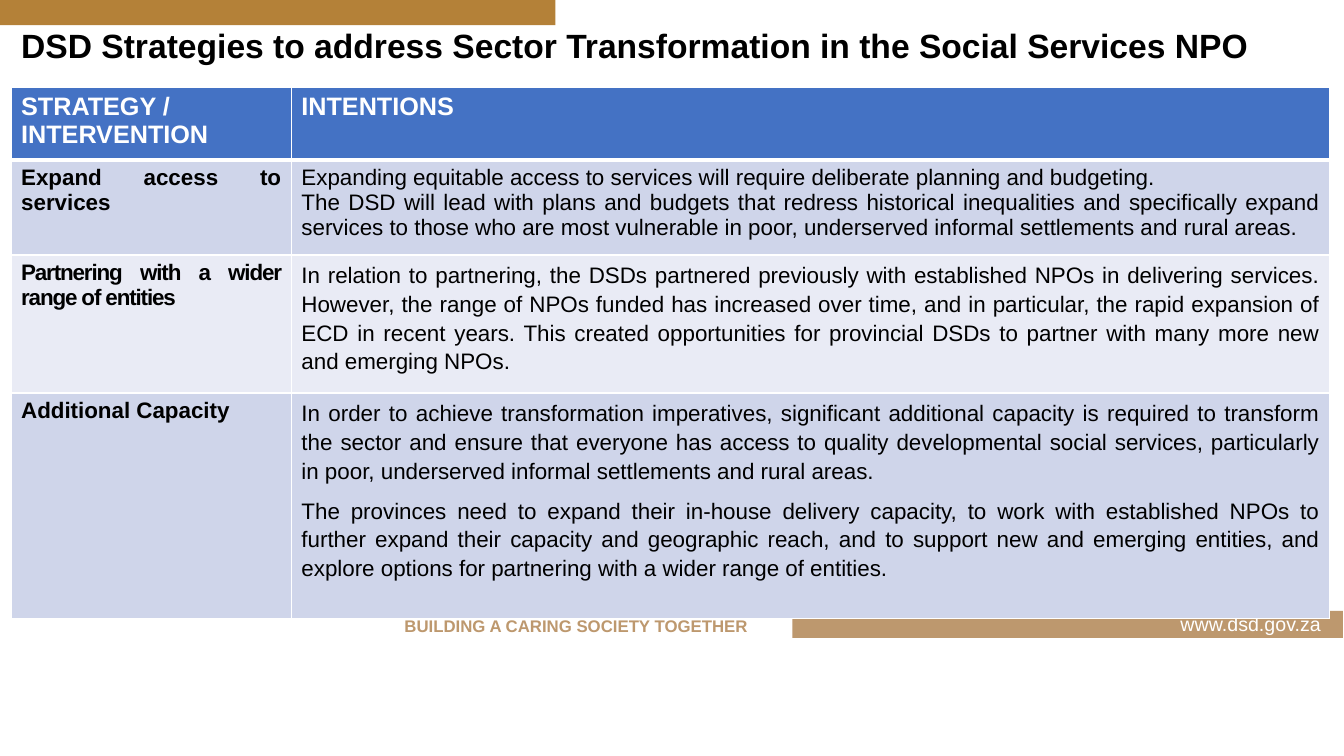
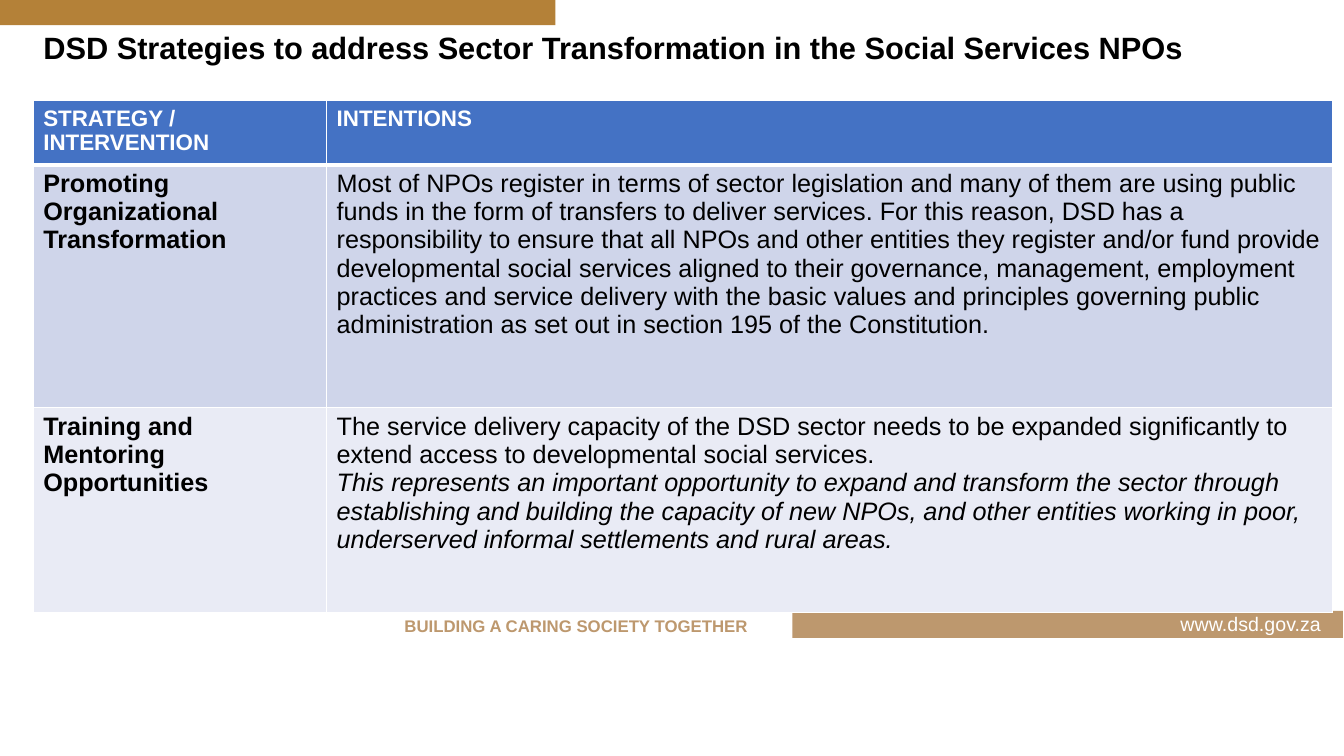
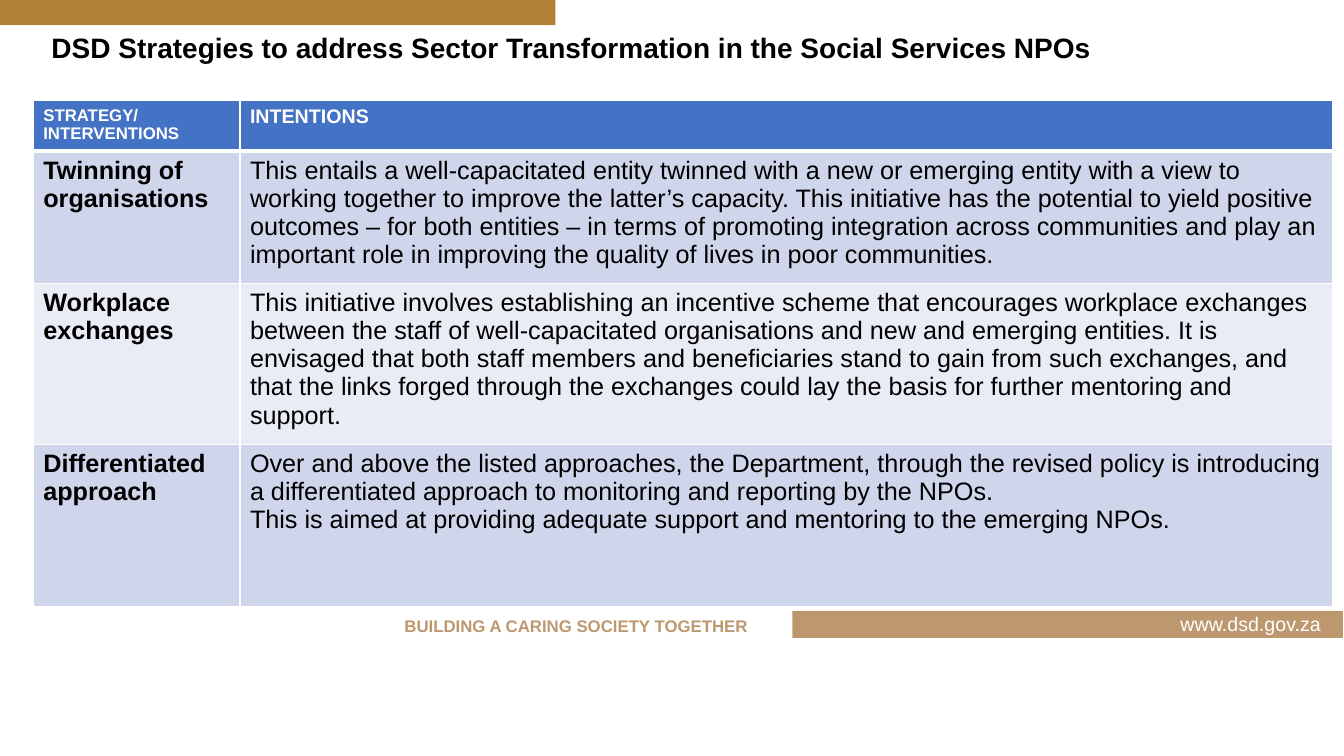
from lxml.etree import SubElement
from pptx import Presentation
from pptx.dml.color import RGBColor
from pptx.enum.shapes import MSO_SHAPE as Shape
from pptx.enum.text import MSO_ANCHOR as Anchor, MSO_AUTO_SIZE as AutoSize, PP_ALIGN as Align
from pptx.oxml.ns import qn
from pptx.util import Inches, Pt

BLACK = RGBColor(0x00, 0x00, 0x00)
WHITE = RGBColor(0xFF, 0xFF, 0xFF)
GOLD = RGBColor(0xB4, 0x81, 0x38)
TAN = RGBColor(0xBD, 0x98, 0x6E)
HEADER_BLUE = RGBColor(0x44, 0x72, 0xC4)
BANDS = (RGBColor(0xCF, 0xD5, 0xEA), RGBColor(0xE9, 0xEB, 0xF5))
FONT = "Arial"
TITLE_ONLY = 5


def write(frame, *texts, size, color=BLACK, bold=False, italic=False,
          align=Align.LEFT, line=None, after=None, tracking=None):
    """Fill a frame with one paragraph per text; italic is one flag or the index set of italic paragraphs."""
    for index, text in enumerate(texts):
        paragraph = frame.add_paragraph() if index else frame.paragraphs[0]
        paragraph.alignment = align
        if line is not None:
            paragraph.line_spacing = line
        if after is not None:
            paragraph.space_after = Pt(after)
        run = paragraph.add_run()
        run.text = text
        font = run.font
        font.name, font.size, font.bold = FONT, Pt(size), bold
        font.italic = index in italic if isinstance(italic, set) else italic
        font.color.rgb = color
        if tracking is not None:
            run._r.get_or_add_rPr().set("spc", str(round(tracking * 100)))


def set_borders(cell, **widths):
    properties = cell._tc.get_or_add_tcPr()
    for side, width in widths.items():
        border = SubElement(properties, qn(f"a:ln{side}"), w=str(Pt(width)))
        fill = SubElement(border, qn("a:solidFill"))
        SubElement(fill, qn("a:srgbClr"), val=str(WHITE))


class Deck:
    def __init__(self):
        self.presentation = Presentation()
        self.presentation.slide_width = Inches(13.33)
        self.presentation.slide_height = Inches(7.5)
        self.slide = None

    def add_slide(self, title, at, size):
        layout = self.presentation.slide_layouts[TITLE_ONLY]
        self.slide = self.presentation.slides.add_slide(layout)
        self.band(0, -0.02, 5.51, GOLD)
        self.band(7.86, 6.06, 5.46, TAN)
        self.label("BUILDING A CARING SOCIETY TOGETHER", (3.57, 6.06, 4.29, 0.3),
                   size=12, color=TAN, bold=True, align=Align.CENTER)
        self.label("www.dsd.gov.za", (11.61, 6.02, 1.6, 0.34), wrap=False,
                   size=14, color=WHITE)
        heading = self.slide.shapes.title
        heading.left, heading.top, heading.width, heading.height = map(Inches, at)
        heading.text_frame.auto_size = AutoSize.NONE
        heading.text_frame.vertical_anchor = Anchor.MIDDLE
        write(heading.text_frame, title, size=size, bold=True, line=0.9)

    def band(self, left, top, width, color):
        band = self.slide.shapes.add_shape(
            Shape.RECTANGLE, Inches(left), Inches(top), Inches(width), Inches(0.27))
        band.shadow.inherit = False
        band.fill.solid()
        band.fill.fore_color.rgb = color
        band.line.fill.background()

    def label(self, text, at, wrap=True, **style):
        frame = self.slide.shapes.add_textbox(*map(Inches, at)).text_frame
        frame.word_wrap = wrap
        write(frame, text, **style)

    def strategy_table(self, left, top, widths, heights, headers, size, rows,
                       align=Align.LEFT):
        """Headers are (text, size) pairs; rows are (strategy, its style, intentions, their style)."""
        table = self.slide.shapes.add_table(
            len(heights), len(widths), Inches(left), Inches(top),
            Inches(sum(widths)), Inches(sum(heights))).table
        for column, width in zip(table.columns, widths):
            column.width = Inches(width)
        for row, height in zip(table.rows, heights):
            row.height = Inches(height)
        for column, (text, header_size) in enumerate(headers):
            cell = self.filled_cell(table, 0, column, HEADER_BLUE)
            write(cell.text_frame, text, size=header_size, color=WHITE, bold=True)
        for index, (strategy, strategy_style, intentions, intention_style) in enumerate(rows):
            color = BANDS[index % 2]
            cell = self.filled_cell(table, index + 1, 0, color)
            write(cell.text_frame, strategy, size=size, bold=True, align=align, **strategy_style)
            cell = self.filled_cell(table, index + 1, 1, color)
            write(cell.text_frame, *intentions, size=size, align=align, **intention_style)

    @staticmethod
    def filled_cell(table, row, column, color):
        cell = table.cell(row, column)
        set_borders(cell, L=1, R=1, T=3 if row == 1 else 1, B=3 if row == 0 else 1)
        cell.fill.solid()
        cell.fill.fore_color.rgb = color
        return cell


def main():
    deck = Deck()
    title = "DSD Strategies to address Sector Transformation in the Social Services NPO"
    airy = {"line": 1.15, "after": 8}

    deck.add_slide(title, (0.11, 0.28, 13.08, 0.38), 24)
    deck.strategy_table(
        0.11, 0.87, (2.78, 10.3), (0.72, 0.94, 1.37, 2.24),
        (("STRATEGY / INTERVENTION", 18), ("INTENTIONS", 18)), 16,
        [
            ("Expand access to services", {}, [
                "Expanding equitable access to services will require deliberate planning and "
                "budgeting.",
                "The DSD will lead with plans and budgets that redress historical inequalities "
                "and specifically expand services to those who are most vulnerable in poor, "
                "underserved informal settlements and rural areas.",
            ], {}),
            ("Partnering with a wider range of entities", {"tracking": -0.8}, [
                "In relation to partnering, the DSDs partnered previously with established NPOs "
                "in delivering services. However, the range of NPOs funded has increased over "
                "time, and in particular, the rapid expansion of ECD in recent years. This "
                "created opportunities for provincial DSDs to partner with many more new and "
                "emerging NPOs.",
            ], airy),
            ("Additional Capacity", {}, [
                "In order to achieve transformation imperatives, significant additional capacity "
                "is required to transform the sector and ensure that everyone has access to "
                "quality developmental social services, particularly in poor, underserved "
                "informal settlements and rural areas.",
                "The provinces need to expand their in-house delivery capacity, to work with "
                "established NPOs to further expand their capacity and geographic reach, and to "
                "support new and emerging entities, and explore options for partnering with a "
                "wider range of entities.",
            ], airy),
        ], align=Align.JUSTIFY)

    deck.add_slide(title + "s", (0.33, 0.19, 13, 0.6), 22)
    deck.strategy_table(
        0.33, 1, (2.91, 9.98), (0.51, 2.41, 2.03),
        (("STRATEGY / INTERVENTION", 16), ("INTENTIONS", 16)), 18,
        [
            ("Promoting Organizational Transformation", {}, [
                "Most of NPOs register in terms of sector legislation and many of them are using "
                "public funds in the form of transfers to deliver services. For this reason, DSD "
                "has a responsibility to ensure that all NPOs and other entities they register "
                "and/or fund provide developmental social services aligned to their governance, "
                "management, employment practices and service delivery with the basic values and "
                "principles governing public administration as set out in section 195 of the "
                "Constitution.",
            ], {}),
            ("Training and Mentoring Opportunities", {}, [
                "The service delivery capacity of the DSD sector needs to be expanded "
                "significantly to extend access to developmental social services.",
                "This represents an important opportunity to expand and transform the sector "
                "through establishing and building the capacity of new NPOs, and other entities "
                "working in poor, underserved informal settlements and rural areas.",
            ], {"italic": {1}}),
        ])

    deck.add_slide(title + "s", (0.41, 0.19, 12.66, 0.6), 20)
    deck.strategy_table(
        0.33, 1, (2.05, 10.84), (0.5, 1.31, 1.39, 1.61),
        (("STRATEGY/INTERVENTIONS", 12), ("INTENTIONS", 14)), 18,
        [
            ("Twinning of organisations", {}, [
                "This entails a well-capacitated entity twinned with a new or emerging entity "
                "with a view to working together to improve the latter’s capacity. This "
                "initiative has the potential to yield positive outcomes – for both entities – "
                "in terms of promoting integration across communities and play an important role "
                "in improving the quality of lives in poor communities.",
            ], {}),
            ("Workplace exchanges", {}, [
                "This initiative involves establishing an incentive scheme that encourages "
                "workplace exchanges between the staff of well-capacitated organisations and new "
                "and emerging entities. It is envisaged that both staff members and "
                "beneficiaries stand to gain from such exchanges, and that the links forged "
                "through the exchanges could lay the basis for further mentoring and support.",
            ], {}),
            ("Differentiated approach", {}, [
                "Over and above the listed approaches, the Department, through the revised "
                "policy is introducing a differentiated approach to monitoring and reporting by "
                "the NPOs.",
                "This is aimed at providing adequate support and mentoring to the emerging NPOs.",
            ], {}),
        ])

    deck.presentation.save("out.pptx")


if __name__ == "__main__":
    main()
